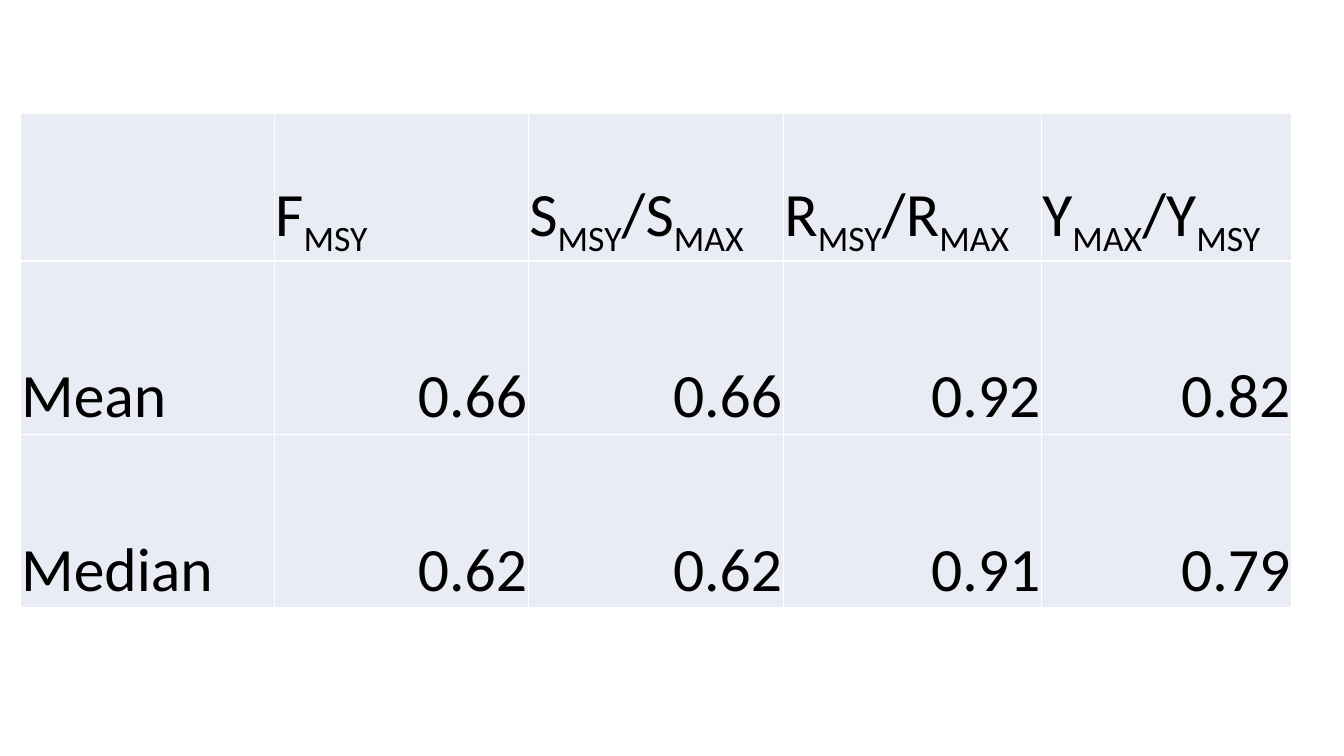
"""Build a slide with a table of mean and median reference point ratios."""
from dataclasses import dataclass

from lxml import etree
from pptx import Presentation
from pptx.dml.color import RGBColor
from pptx.enum.text import MSO_ANCHOR, PP_ALIGN
from pptx.oxml.ns import qn
from pptx.slide import Slide
from pptx.table import _Cell
from pptx.util import Inches, Pt

BOTTOM = MSO_ANCHOR.BOTTOM
LEFT = PP_ALIGN.LEFT
RIGHT = PP_ALIGN.RIGHT


@dataclass(frozen=True)
class Theme:
    font: str = "Calibri"
    size: int = 44
    text: str = "000000"
    fill: str = "E9EBF5"
    border: str = "FFFFFF"
    border_width: int = 1
    subscript: int = -25


@dataclass(frozen=True)
class TableRow:
    height: float
    cells: tuple[tuple[str, ...], ...]
    alignment: PP_ALIGN


THEME = Theme()
COLUMN_WIDTHS = (2.52, 2.52, 2.53, 2.56, 2.48)
ROWS = (
    TableRow(1.46, ((), ("F", "MSY"), ("S", "MSY", "/S", "MAX"),
                    ("R", "MSY", "/R", "MAX"), ("Y", "MAX", "/Y", "MSY")), LEFT),
    TableRow(1.72, (("Mean",), ("0.66",), ("0.66",), ("0.92",), ("0.82",)), RIGHT),
    TableRow(1.72, (("Median",), ("0.62",), ("0.62",), ("0.91",), ("0.79",)), RIGHT),
)


def add_borders(cell: _Cell) -> None:
    properties = cell._tc.get_or_add_tcPr()
    for side in ("a:lnL", "a:lnR", "a:lnT", "a:lnB"):
        line = etree.SubElement(properties, qn(side), w=str(Pt(THEME.border_width)))
        fill = etree.SubElement(line, qn("a:solidFill"))
        etree.SubElement(fill, qn("a:srgbClr"), val=THEME.border)


def write_cell(cell: _Cell, parts: tuple[str, ...], *, alignment: PP_ALIGN) -> None:
    """Write text parts that alternate between baseline and subscript."""
    cell.vertical_anchor = BOTTOM
    cell.margin_left = cell.margin_right = cell.margin_top = Inches(0.01)
    cell.margin_bottom = 0
    paragraph = cell.text_frame.paragraphs[0]
    paragraph.alignment = alignment
    for index, part in enumerate(parts):
        run = paragraph.add_run()
        run.text = part
        run.font.name = THEME.font
        run.font.size = Pt(THEME.size)
        run.font.color.rgb = RGBColor.from_string(THEME.text)
        if index % 2:
            run._r.get_or_add_rPr().set("baseline", str(THEME.subscript * 1000))


def add_ratio_table(slide: Slide) -> None:
    width = sum(COLUMN_WIDTHS)
    height = sum(row.height for row in ROWS)
    shape = slide.shapes.add_table(len(ROWS), len(COLUMN_WIDTHS), Inches(0.2),
                                   Inches(1.13), Inches(width), Inches(height))
    table = shape.table
    table.first_row = False
    table.horz_banding = False
    for column, column_width in zip(table.columns, COLUMN_WIDTHS):
        column.width = Inches(column_width)
    for table_row, row in zip(table.rows, ROWS):
        table_row.height = Inches(row.height)
        for index, (cell, parts) in enumerate(zip(table_row.cells, row.cells)):
            add_borders(cell)
            cell.fill.solid()
            cell.fill.fore_color.rgb = RGBColor.from_string(THEME.fill)
            write_cell(cell, parts, alignment=row.alignment if index else LEFT)


def main() -> None:
    presentation = Presentation()
    presentation.slide_width = Inches(13.33)
    presentation.slide_height = Inches(7.5)
    slide = presentation.slides.add_slide(presentation.slide_layouts[6])
    add_ratio_table(slide)
    presentation.save("out.pptx")


if __name__ == "__main__":
    main()
